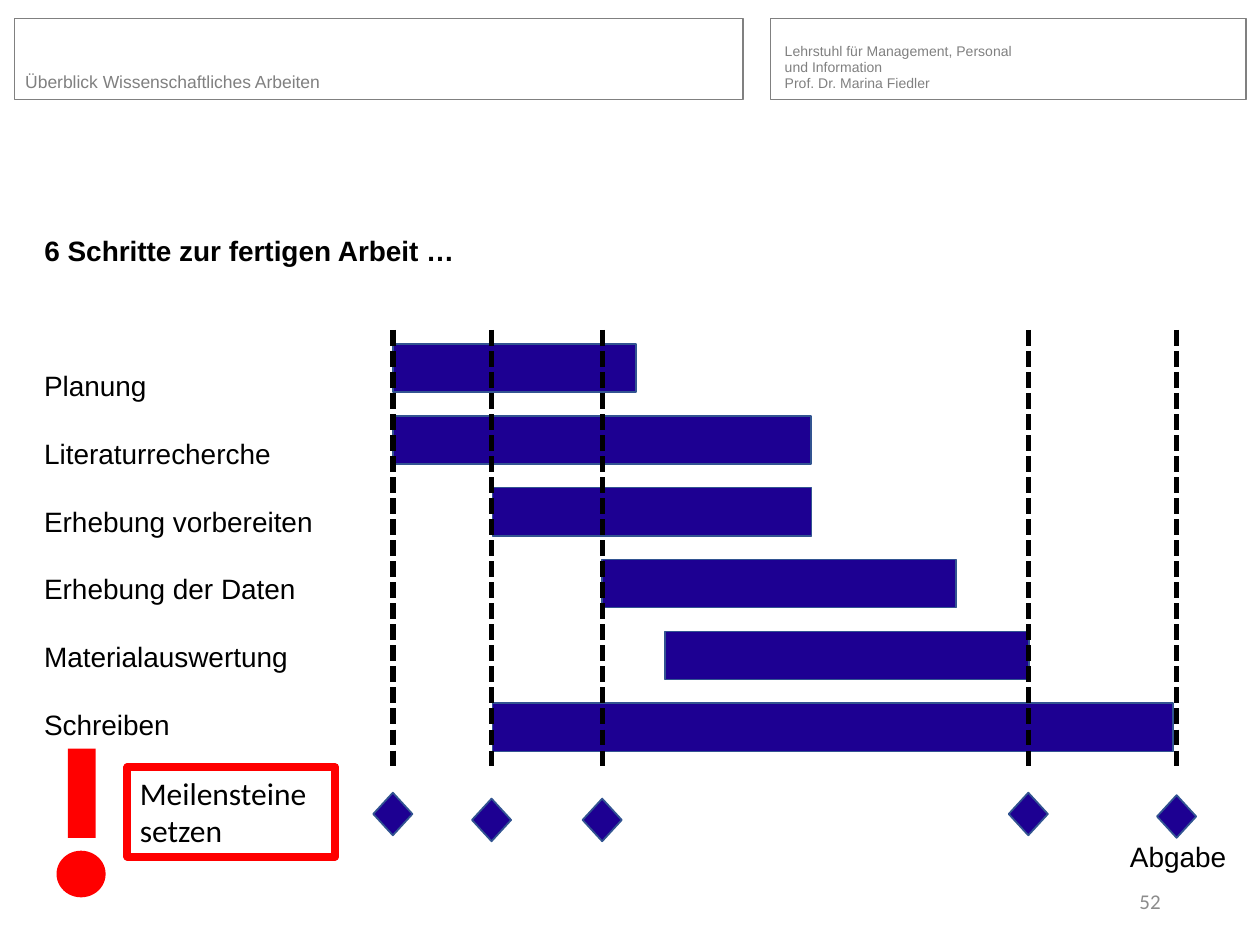
from lxml.etree import SubElement
from pptx import Presentation
from pptx.dml.color import RGBColor
from pptx.enum.dml import MSO_LINE
from pptx.enum.shapes import MSO_CONNECTOR, MSO_SHAPE
from pptx.enum.text import MSO_ANCHOR as ANCHOR, MSO_AUTO_SIZE as AUTO_SIZE, PP_ALIGN as ALIGN
from pptx.oxml.ns import qn
from pptx.util import Cm, Pt

BLACK = RGBColor(0x00, 0x00, 0x00)
GREY = RGBColor(0x80, 0x80, 0x80)
PAGE_GREY = RGBColor(0x8C, 0x8C, 0x8C)
NAVY = RGBColor(0x1D, 0x00, 0x92)
EDGE_BLUE = RGBColor(0x32, 0x54, 0x91)
RED = RGBColor(0xFF, 0x00, 0x00)

HEADING = "6 Schritte zur fertigen Arbeit …"
COURSE = "Überblick Wissenschaftliches Arbeiten"
CHAIR = ["Lehrstuhl für Management, Personal", "und Information", "Prof. Dr. Marina Fiedler"]
HEADER_FRAMES = [(0.3, 0.38, 14.68, 1.63), (15.54, 0.38, 9.58, 1.63)]

STEPS = [
    ("Planung", 7.92, 4.9),
    ("Literaturrecherche", 7.92, 8.43),
    ("Erhebung vorbereiten", 9.93, 6.43),
    ("Erhebung der Daten", 12.14, 7.14),
    ("Materialauswertung", 13.41, 7.34),
    ("Schreiben", 9.93, 13.72),
]
BAR_TOP, BAR_PITCH, BAR_HEIGHT = 6.93, 1.45, 0.97

MILESTONES = [(7.92, 15.98), (9.91, 16.1), (12.14, 16.1), (20.73, 15.98), (23.72, 16.03)]
LINE_TOP, LINE_BOTTOM = 6.65, 15.47
DIAMOND_WIDTH, DIAMOND_HEIGHT = 0.79, 0.86

STEP_LINE, STEP_GAP = Pt(28.8), Pt(10)


def add_box(slide, kind, box, fill=None, line=None, width=0):
    shape = slide.shapes.add_shape(kind, *map(Cm, box))
    shape.shadow.inherit = False
    if fill is None:
        shape.fill.background()
    else:
        shape.fill.solid()
        shape.fill.fore_color.rgb = fill
    if line is None:
        shape.line.fill.background()
    else:
        shape.line.color.rgb = line
        shape.line.width = Pt(width)
    return shape


def write(shape, lines, size, color, font="Arial", bold=False, align=ALIGN.LEFT,
          anchor=ANCHOR.TOP, spacing=None, gap=None, inset=True):
    frame = shape.text_frame
    frame.word_wrap = True
    frame.auto_size = AUTO_SIZE.NONE
    frame.vertical_anchor = anchor
    if not inset:
        frame.margin_left = frame.margin_right = frame.margin_top = frame.margin_bottom = 0
    for index, text in enumerate(lines):
        paragraph = frame.add_paragraph() if index else frame.paragraphs[0]
        paragraph.alignment = align
        paragraph.line_spacing = spacing
        if index:
            paragraph.space_before = gap
        run = paragraph.add_run()
        run.text = text
        run.font.name = font
        run.font.size = Pt(size)
        run.font.bold = bold
        run.font.color.rgb = color


def add_text(slide, box, lines, size, color, **style):
    write(slide.shapes.add_textbox(*map(Cm, box)), lines, size, color, **style)


def add_header(slide):
    for box in HEADER_FRAMES:
        add_box(slide, MSO_SHAPE.RECTANGLE, box, line=GREY, width=0.75)
    add_text(slide, (0.51, 0.76, 8.48, 1.09), [COURSE], 10, GREY,
             anchor=ANCHOR.BOTTOM, inset=False)
    add_text(slide, (15.82, 0.61, 7.44, 1.24), CHAIR, 8, GREY,
             anchor=ANCHOR.BOTTOM, spacing=0.95, inset=False)


def add_heading(slide):
    title = slide.shapes.title
    title.left, title.top, title.width, title.height = map(Cm, (0.64, 4.24, 24.13, 1.4))
    write(title, [HEADING], 16, BLACK, bold=True, spacing=STEP_LINE)


def add_schedule(slide):
    add_text(slide, (0.64, 6.96, 7.0, 8.3), [step[0] for step in STEPS], 16, BLACK,
             spacing=STEP_LINE, gap=STEP_GAP)
    for row, (_, start, length) in enumerate(STEPS):
        add_box(slide, MSO_SHAPE.RECTANGLE,
                (start, BAR_TOP + row * BAR_PITCH, length, BAR_HEIGHT), NAVY, EDGE_BLUE, 1)


def add_milestones(slide):
    for x, diamond_top in MILESTONES:
        line = slide.shapes.add_connector(
            MSO_CONNECTOR.STRAIGHT, Cm(x), Cm(LINE_TOP), Cm(x), Cm(LINE_BOTTOM))
        line.line.color.rgb = BLACK
        line.line.width = Pt(3)
        line.line.dash_style = MSO_LINE.SQUARE_DOT
        SubElement(line._element.spPr, qn("a:effectLst"))
        add_box(slide, MSO_SHAPE.DIAMOND,
                (x - DIAMOND_WIDTH / 2, diamond_top, DIAMOND_WIDTH, DIAMOND_HEIGHT),
                NAVY, EDGE_BLUE, 1)
    add_text(slide, (22.53, 16.79, 2.51, 0.94), ["Abgabe"], 16, BLACK)


def add_reminder(slide):
    note = add_box(slide, MSO_SHAPE.RECTANGLE, (2.57, 15.47, 4.19, 1.8), line=RED, width=4.5)
    write(note, ["Meilensteine setzen"], 18, BLACK, font="Calibri")
    add_box(slide, MSO_SHAPE.RECTANGLE, (1.37, 15.09, 0.56, 1.8), RED)
    add_box(slide, MSO_SHAPE.OVAL, (1.14, 17.15, 0.99, 0.94), RED)


def main():
    presentation = Presentation()
    presentation.slide_width, presentation.slide_height = Cm(25.4), Cm(19.05)
    slide = presentation.slides.add_slide(presentation.slide_layouts[5])
    add_header(slide)
    add_heading(slide)
    add_schedule(slide)
    add_milestones(slide)
    add_reminder(slide)
    add_text(slide, (17.93, 17.65, 5.72, 1.02), ["52"], 12, PAGE_GREY,
             font="Calibri", align=ALIGN.RIGHT, anchor=ANCHOR.MIDDLE)
    presentation.save("out.pptx")


if __name__ == "__main__":
    main()
